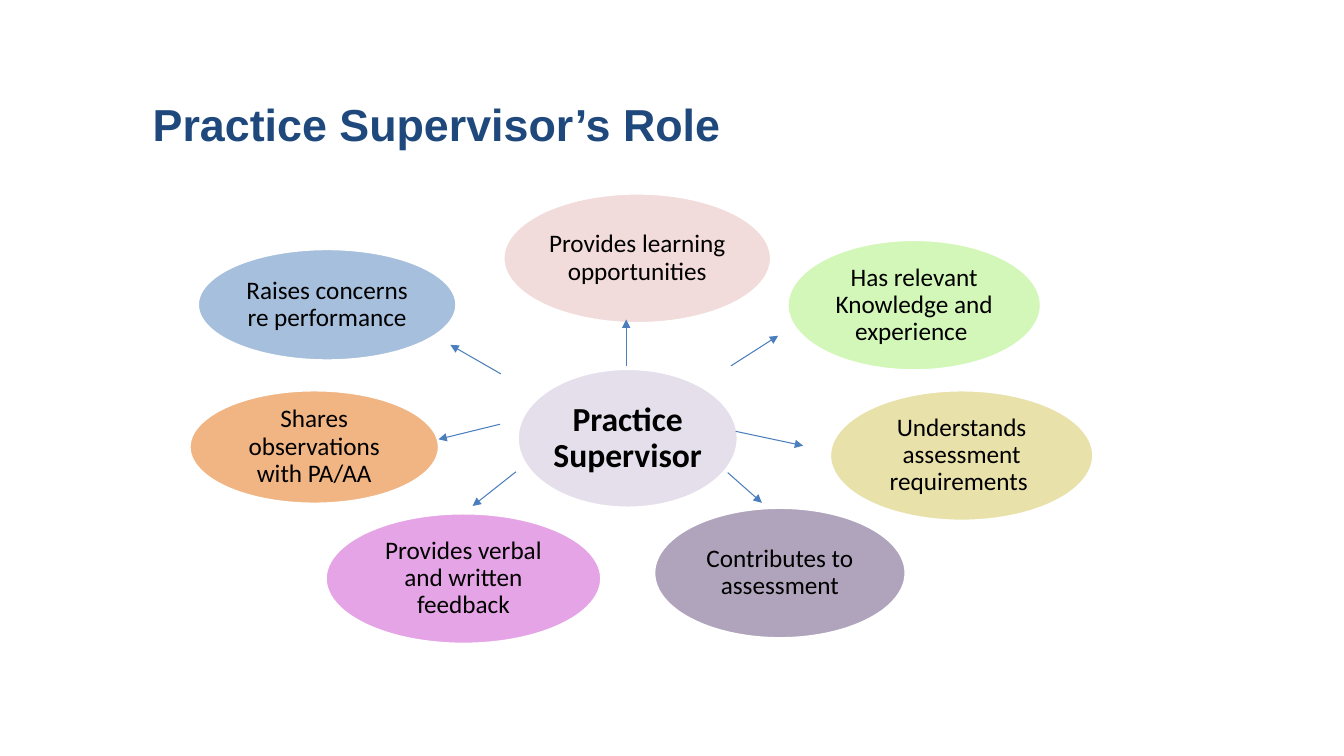
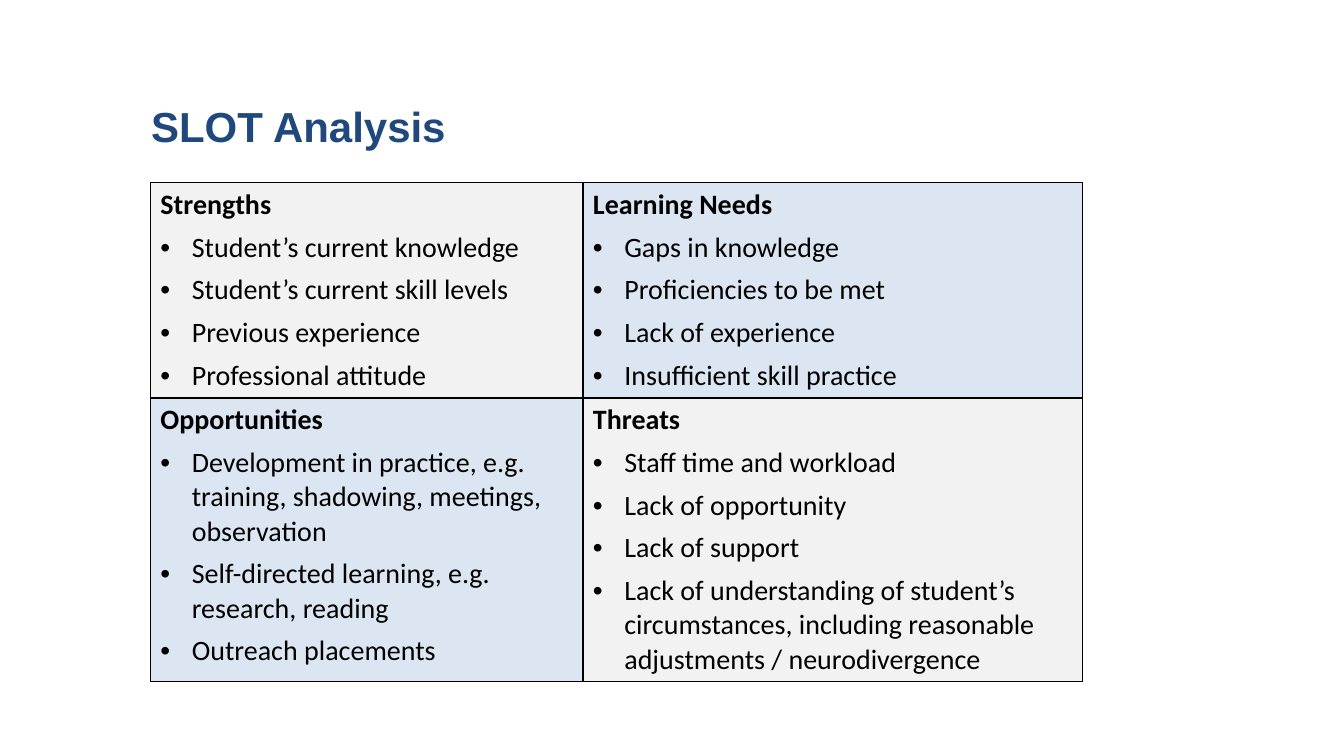
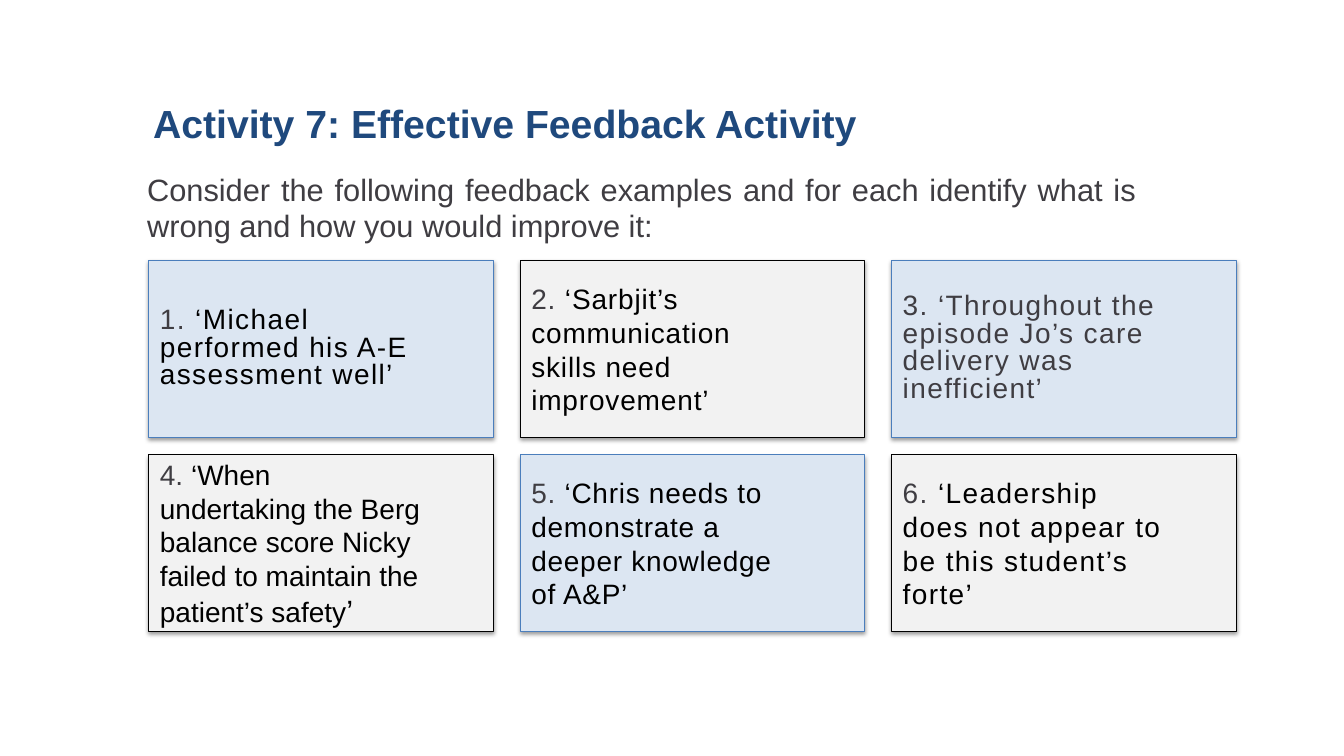
"""Build three slides on practice supervision: role map, SLOT table and feedback cards."""
from lxml.etree import SubElement
from pptx import Presentation
from pptx.dml.color import RGBColor
from pptx.enum.shapes import MSO_CONNECTOR as Link, MSO_SHAPE as Preset
from pptx.enum.text import MSO_ANCHOR as Anchor, PP_ALIGN as Align
from pptx.oxml import parse_xml
from pptx.oxml.ns import nsdecls, qn
from pptx.util import Cm, Pt

rgb = RGBColor.from_string
NAVY, BLUE, BLACK, WHITE = "1F497D", "4B7EBC", "000000", "FFFFFF"
PALE_BLUE, PALE_GREY, CHARCOAL = "DCE6F2", "F2F2F2", "3F3D42"


def write(paragraph, text, size, color=BLACK, font="Calibri", bold=False, tracking=0):
    run = paragraph.add_run()
    run.text = text
    run.font.size, run.font.name, run.font.bold = Pt(size), font, bold
    run.font.color.rgb = rgb(color)
    if tracking:
        run._r.get_or_add_rPr().set("spc", str(round(tracking * 100)))


def draw(slide, preset, box, fill, outline=None, weight=0):
    shape = slide.shapes.add_shape(preset, *(Cm(length) for length in box))
    shape.fill.solid()
    shape.fill.fore_color.rgb = rgb(fill)
    if outline:
        shape.line.color.rgb = rgb(outline)
        shape.line.width = Pt(weight)
    else:
        shape.line.fill.background()
    shape.shadow.inherit = False
    shape.text_frame.word_wrap = True
    shape.text_frame.vertical_anchor = Anchor.MIDDLE
    return shape


deck = Presentation()
deck.slide_width, deck.slide_height = Cm(33.87), Cm(19.05)

slides = []
for heading, size, box, inset in [
    ("Practice Supervisor’s Role", 32, (3.6, 2.38, 26.67, 1.48), 0.25),
    ("SLOT Analysis", 30, (3.81, 2.54, 26.26, 1.37), 0),
    ("Activity 7: Effective Feedback Activity", 28, (3.61, 2.33, 26.67, 1.55), 0.25),
]:
    slide = deck.slides.add_slide(deck.slide_layouts[6])
    title = draw(slide, Preset.RECTANGLE, box, WHITE).text_frame
    title.margin_left = title.margin_right = Cm(inset)
    title.margin_top = title.margin_bottom = 0
    if not inset:
        title.vertical_anchor = Anchor.TOP
    title.paragraphs[0].alignment = Align.LEFT
    write(title.paragraphs[0], heading, size, NAVY, "Arial", True)
    slides.append(slide)
role, slot, activity = slides

duties = [
    ("Practice Supervisor", (13.04, 9.29, 5.56, 3.51), "CCC1DA"),
    ("Provides learning opportunities", (12.68, 4.87, 6.76, 3.28), "E6B9B8"),
    ("Provides verbal and written feedback", (8.2, 12.93, 6.96, 3.3), "CD4BCD"),
    ("Understands assessment requirements ", (20.91, 9.83, 6.65, 3.3), "D4C556"),
    ("Contributes to assessment", (16.48, 12.79, 6.35, 3.3), "604A7B"),
    ("Shares observations with PA/AA", (4.77, 9.83, 6.3, 2.87), "E46C0A"),
    ("Has relevant Knowledge and experience ", (19.84, 6.04, 6.4, 3.3), "A8F072"),
    ("Raises concerns re performance", (4.98, 6.27, 6.53, 2.82), "4F81BD"),
]
for index, (duty, box, fill) in enumerate(duties):
    bubble = draw(role, Preset.OVAL, box, fill, WHITE, 2)
    tint = bubble._element.spPr.find(qn("a:solidFill"))[0]
    SubElement(tint, qn("a:alpha"), val="50000")
    frame = bubble.text_frame
    frame.margin_left = frame.margin_right = frame.margin_top = frame.margin_bottom = Cm(0.08)
    frame.paragraphs[0].alignment = Align.CENTER
    frame.paragraphs[0].line_spacing = 0.9
    is_hub = index == 0
    write(frame.paragraphs[0], duty, 24 if is_hub else 18, bold=is_hub)

for ends in [
    (12.62, 9.42, 11.35, 8.69),
    (12.6, 10.69, 11.05, 11.07),
    (13, 11.89, 11.91, 12.75),
    (15.78, 9.22, 15.78, 8.05),
    (18.42, 9.22, 19.61, 8.46),
    (18.54, 10.87, 20.24, 11.23),
    (18.34, 11.91, 19.2, 12.67),
]:
    arrow = role.shapes.add_connector(Link.STRAIGHT, *(Cm(length) for length in ends))
    arrow.line.color.rgb = rgb(BLUE)
    arrow.line.width = Pt(0.75)
    SubElement(arrow.line._get_or_add_ln(), qn("a:tailEnd"), type="triangle")
    SubElement(arrow._element.spPr, qn("a:effectLst"))

quadrants = [
    ("Strengths", ["Student’s current knowledge", "Student’s current skill levels",
                   "Previous experience", "Professional attitude"]),
    ("Learning Needs", ["Gaps in knowledge", "Proficiencies to be met",
                        "Lack of experience", "Insufficient skill practice"]),
    ("Opportunities", ["Development in practice, e.g. training, shadowing, meetings, observation",
                       "Self-directed learning, e.g. research, reading", "Outreach placements"]),
    ("Threats", ["Staff time and workload", "Lack of opportunity", "Lack of support",
                 "Lack of understanding of student’s circumstances, including reasonable "
                 "adjustments / neurodivergence"]),
]
grid = slot.shapes.add_table(2, 2, Cm(3.79), Cm(4.6), Cm(23.48), Cm(12.58)).table
grid.first_row = grid.horz_banding = False
for index, (width, height) in enumerate([(10.9, 5.43), (12.58, 7.15)]):
    grid.columns[index].width = Cm(width)
    grid.rows[index].height = Cm(height)

for index, (quadrant, points) in enumerate(quadrants):
    row, column = divmod(index, 2)
    cell = grid.cell(row, column)
    for side in ("lnL", "lnR", "lnT", "lnB"):
        cell._tc.get_or_add_tcPr().append(parse_xml(
            f'<a:{side} {nsdecls("a")} w="12700"><a:solidFill><a:srgbClr val="{BLACK}"/>'
            f'</a:solidFill></a:{side}>'))
    cell.fill.solid()
    cell.fill.fore_color.rgb = rgb(PALE_GREY if row == column else PALE_BLUE)
    head = cell.text_frame.paragraphs[0]
    head.space_after = Pt(6)
    write(head, quadrant, 20, bold=True)
    for point in points:
        item = cell.text_frame.add_paragraph()
        item.space_after = Pt(6)
        layout = item._p.get_or_add_pPr()
        layout.set("marL", str(Cm(0.79)))
        layout.set("indent", str(-Cm(0.79)))
        SubElement(layout, qn("a:buFont"), typeface="Arial")
        SubElement(layout, qn("a:buChar"), char="•")
        write(item, point, 20)

intro = activity.shapes.add_textbox(Cm(3.63), Cm(4.14), Cm(26.67), Cm(2.03)).text_frame
intro.word_wrap = True
intro.margin_left, intro.margin_top = Cm(0.08), Cm(0.15)
intro.margin_right, intro.margin_bottom = Cm(1.66), 0
intro.paragraphs[0].alignment = Align.JUSTIFY
write(intro.paragraphs[0], "Consider the following feedback examples and for each identify "
      "what is wrong and how you would improve it:", 22, CHARCOAL, "Arial")

examples = [
    ("‘Michael performed his A-E assessment well", 1, Pt(19.6), BLACK, 20),
    ("‘Sarbjit’s communication skills need improvement", 0.6, 1.0, BLACK, 20),
    ("‘Throughout the episode Jo’s care delivery was inefficient", 1, Pt(19.6), CHARCOAL, 20),
    ("‘When undertaking the Berg balance score Nicky failed to maintain the patient’s safety",
     0, 1.0, BLACK, 22),
    ("‘Chris needs to demonstrate a deeper knowledge of A&P", 0.5, 1.0, BLACK, 20),
    ("‘Leadership does not appear to be this student’s forte", 1, 1.0, BLACK, 20),
]
for index, (quote, tracking, spacing, color, quote_mark_size) in enumerate(examples):
    row, column = divmod(index, 3)
    fill, outline = (PALE_GREY, BLACK) if index % 2 else (PALE_BLUE, BLUE)
    box = (3.75 + 9.36 * column, 6.57 + 4.89 * row, 8.69, 4.45)
    card = draw(activity, Preset.RECTANGLE, box, fill, outline, 0.75)
    effects = card._element.spPr.find(qn("a:effectLst"))
    shade = SubElement(effects, qn("a:outerShdw"), blurRad="40000", dist="20000",
                       dir="5400000", rotWithShape="0")
    SubElement(SubElement(shade, qn("a:srgbClr"), val=BLACK), qn("a:alpha"), val="38000")
    frame = card.text_frame
    frame.margin_left, frame.margin_right = Cm(0.28), Cm(1.8)
    example = frame.paragraphs[0]
    example.alignment = Align.LEFT
    example.line_spacing = spacing
    write(example, f"{index + 1}. ", 20, CHARCOAL, "Arial", tracking=tracking)
    write(example, quote, 20, color, "Arial", tracking=tracking)
    write(example, "’", quote_mark_size, color, "Arial", tracking=tracking)

deck.save("out.pptx")
